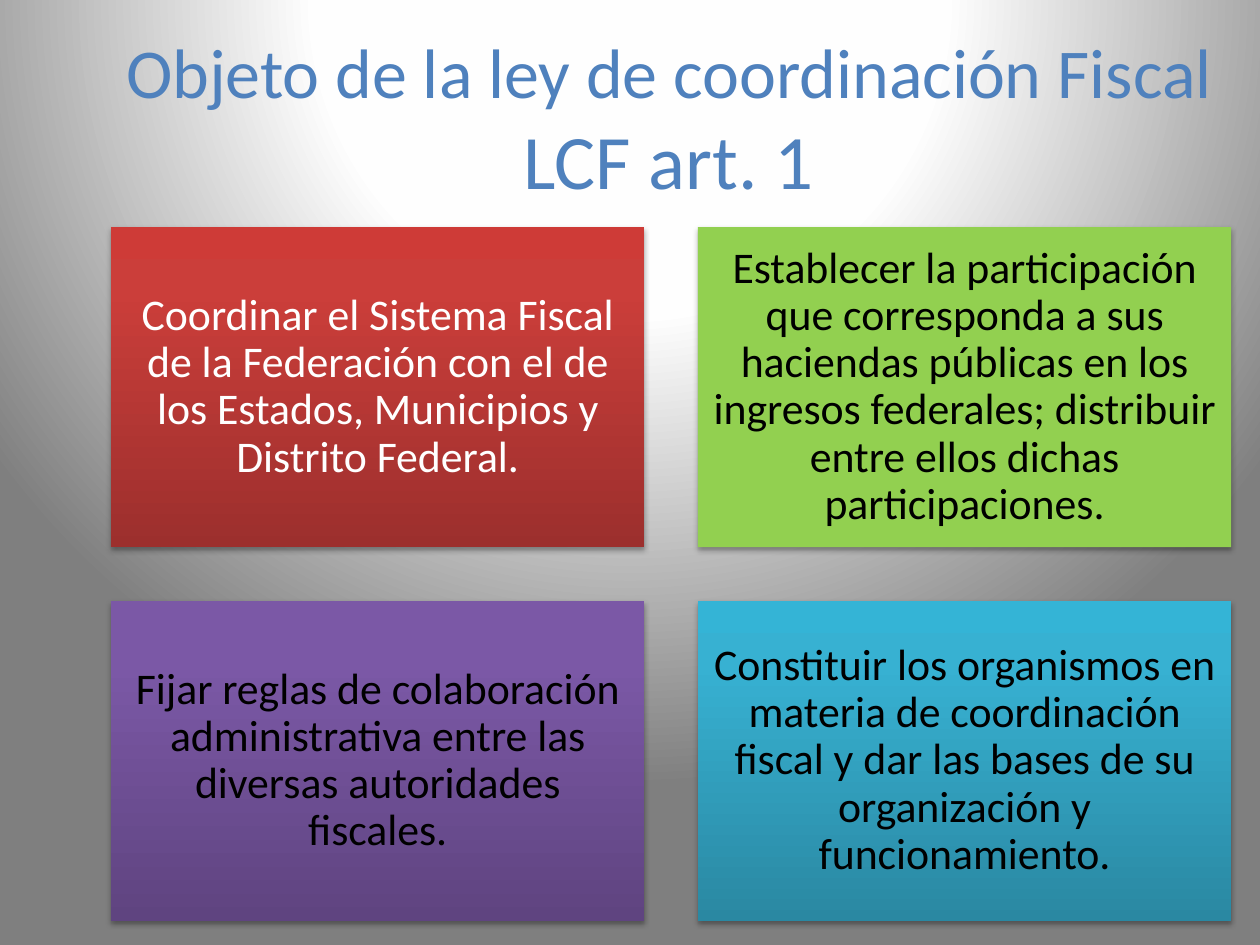
from dataclasses import dataclass

from lxml import etree
from pptx import Presentation
from pptx import util as u
from pptx.dml.color import RGBColor
from pptx.enum import shapes, text
from pptx.oxml.ns import qn

HUES = {
    "title": "4F81BD", "light": "FFFFFF", "dark": "000000", "green": "92D050",
}
# Gradient stops by position in percent
BLENDS = {
    "back": {0: "FFFFFF", 40: "FEFEFE", 100: "7F7F7F"},
    "red": {0: "9C2F2D", 80: "CB3E3A", 100: "CE3B37"},
    "purple": {0: "5F4480", 80: "7B58A6", 100: "7C57A8"},
    "blue": {0: "2A88A2", 80: "37B1D2", 100: "34B4D6"},
}
LEFT, TOP = 2.24, 4.58
WIDE, HIGH, GAP = 10.75, 6.45, 1.08


@dataclass
class Card:
    hue: str
    ink: str
    words: str


CARDS = [
    Card("red", "light", "Coordinar el Sistema Fiscal de la Federación con el de "
         "los Estados, Municipios y Distrito Federal."),
    Card("green", "dark", "Establecer la participación que corresponda a sus "
         "haciendas públicas en los ingresos federales; distribuir entre ellos "
         "dichas participaciones."),
    Card("purple", "dark", "Fijar reglas de colaboración administrativa entre las "
         "diversas autoridades fiscales."),
    Card("blue", "dark", "Constituir los organismos en materia de coordinación "
         "fiscal y dar las bases de su organización y funcionamiento."),
]


def add(up, tag: str, **attrs):
    return etree.SubElement(up, qn(tag), {k: str(v) for k, v in attrs.items()})


def blend(fill, root, name: str):
    """Set a gradient and return its emptied element with the stops added."""
    fill.gradient()
    grad = root.find(".//" + qn("a:gradFill"))
    for kid in list(grad):
        grad.remove(kid)
    stops = add(grad, "a:gsLst")
    for pos, hue in BLENDS[name].items():
        add(add(stops, "a:gs", pos=pos * 1000), "a:srgbClr", val=hue)
    return grad


def shade(shape) -> None:
    shape.shadow.inherit = False
    glow = add(shape.element.spPr.find(qn("a:effectLst")), "a:outerShdw",
               blurRad=u.Pt(3.1), dist=u.Pt(1.8), dir=5400000, rotWithShape=0)
    add(add(glow, "a:srgbClr", val=HUES["dark"]), "a:alpha", val=35000)


def write(para, words: str, size: int, ink: str) -> None:
    para.alignment = text.PP_ALIGN.CENTER
    run = para.add_run()
    run.text = words
    run.font.name = "Calibri"
    run.font.size = u.Pt(size)
    run.font.color.rgb = RGBColor.from_string(HUES[ink])


def draw(slide, card: Card, col: int, row: int) -> None:
    box = slide.shapes.add_shape(
        shapes.MSO_SHAPE.RECTANGLE,
        u.Cm(LEFT + col * (WIDE + GAP)), u.Cm(TOP + row * (HIGH + GAP)),
        u.Cm(WIDE), u.Cm(HIGH))
    box.line.fill.background()
    if card.hue in BLENDS:
        grad = blend(box.fill, box.element, card.hue)
        add(grad, "a:lin", ang=270 * 60000, scaled=0)
    else:
        box.fill.solid()
        box.fill.fore_color.rgb = RGBColor.from_string(HUES[card.hue])
    shade(box)

    frame = box.text_frame
    frame.word_wrap = True
    frame.vertical_anchor = text.MSO_ANCHOR.MIDDLE
    frame.margin_left = frame.margin_right = u.Cm(0.25)
    frame.margin_top = frame.margin_bottom = u.Cm(0.25)
    para = frame.paragraphs[0]
    para.line_spacing = 0.9
    write(para, card.words, 25, card.ink)


def main() -> None:
    deck = Presentation()
    deck.slide_width, deck.slide_height = u.Cm(25.4), u.Cm(19.05)
    slide = deck.slides.add_slide(deck.slide_layouts[6])

    # Spotlight background
    grad = blend(slide.background.fill, slide.element, "back")
    add(add(grad, "a:path", path="circle"), "a:fillToRect",
        l=50000, t=-80000, r=50000, b=180000)

    # Title
    frame = slide.shapes.add_textbox(
        u.Cm(2.18), u.Cm(0.46), u.Cm(22.61), u.Cm(3.84)).text_frame
    frame.word_wrap = False
    frame.auto_size = text.MSO_AUTO_SIZE.SHAPE_TO_FIT_TEXT
    write(frame.paragraphs[0], "Objeto de la ley de coordinación Fiscal", 40, "title")
    write(frame.add_paragraph(), "LCF art. 1", 44, "title")

    # Two by two cards
    for i, card in enumerate(CARDS):
        draw(slide, card, i % 2, i // 2)

    deck.save("out.pptx")


if __name__ == "__main__":
    main()
